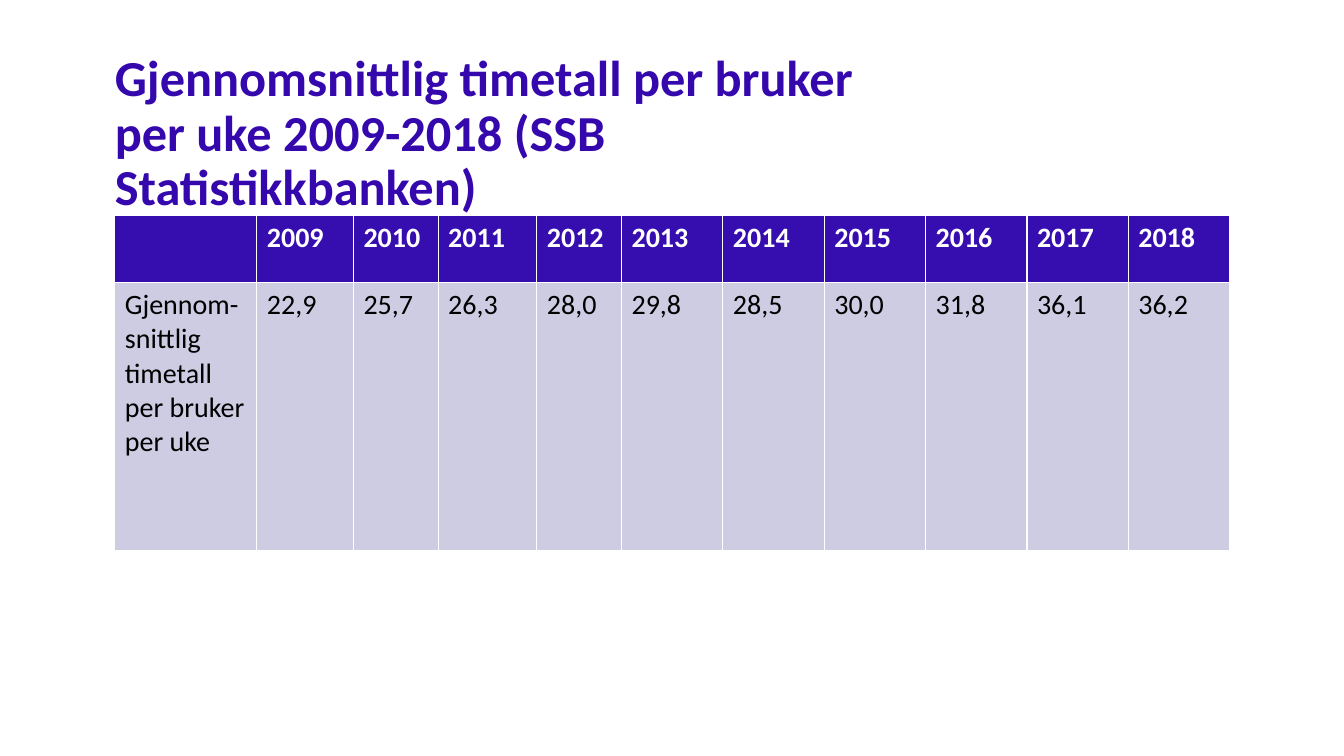
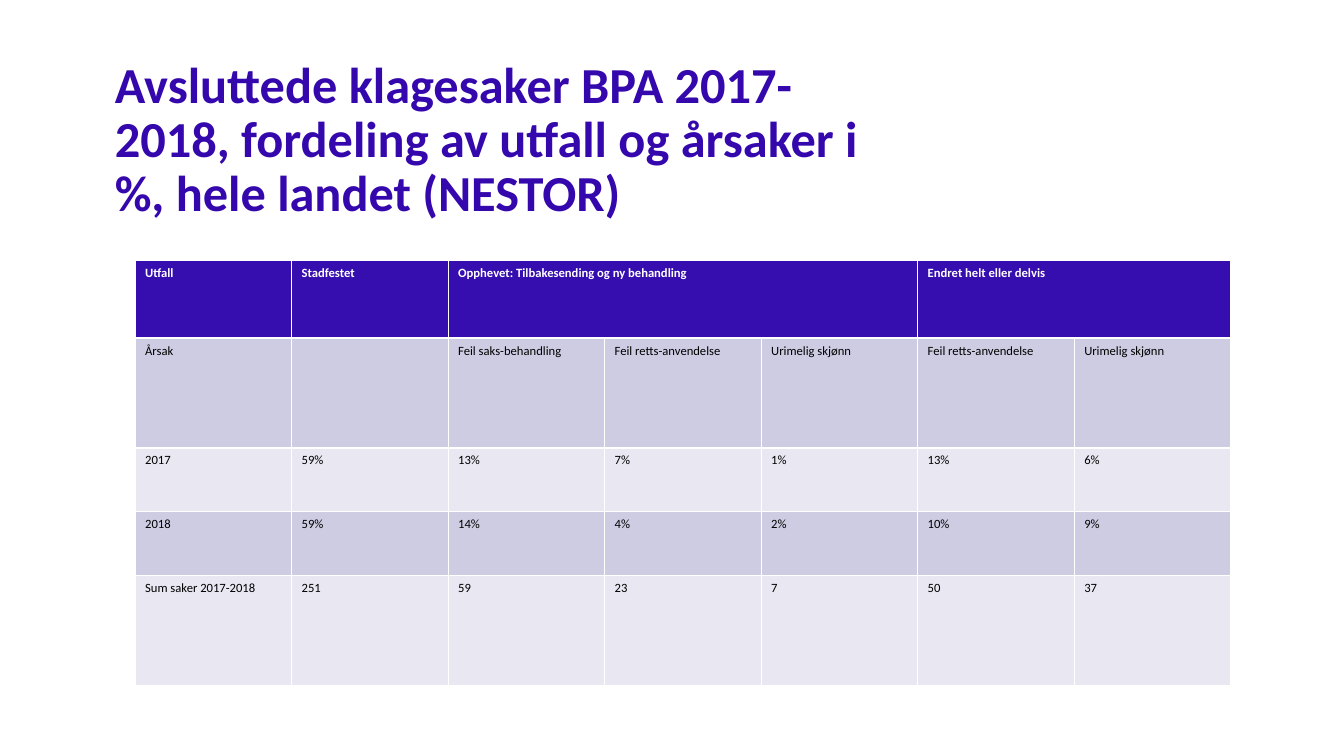
from pptx import Presentation
from pptx.dml.color import RGBColor
from pptx.enum import text
from pptx.util import Pt

FONT = "Calibri"
TITLE, HEADER, WHITE, BLACK = "3408AC", "360DAF", "FFFFFF", "000000"
BANDS = ["CECCE3", "E8E7F2"]


def rgb(value):
    return RGBColor.from_string(value)


def style(p, size, color, bold):
    p.font.name, p.font.size, p.font.bold = FONT, Pt(size), bold
    p.font.color.rgb = rgb(color)


prs = Presentation()
prs.slide_width, prs.slide_height = Pt(960), Pt(540)

# Content of each slide; None continues the merged cell to its left
slides = [
    dict(
        title="Gjennomsnittlig timetall per bruker per uke 2009-2018 (SSB Statistikkbanken)",
        title_box=(82, 38, 567, 69),
        table_at=(82, 154), size=20,
        widths=[101.5, 69, 60.5, 70.5, 60.5] + [72.4] * 6,
        heights=[48, 191.5],
        rows=[
            [""] + [str(year) for year in range(2009, 2019)],
            ["Gjennom-snittlig timetall per bruker per uke", "22,9", "25,7", "26,3",
             "28,0", "29,8", "28,5", "30,0", "31,8", "36,1", "36,2"],
        ],
    ),
    dict(
        title="Avsluttede klagesaker BPA 2017-2018, fordeling av utfall og årsaker i %, "
              "hele landet (NESTOR)",
        title_box=(82, 42.5, 553, 69),
        table_at=(96.5, 186), size=9,
        widths=[111.8] * 7,
        heights=[55.5, 78.5, 45.5, 45.5, 78.5],
        rows=[
            ["Utfall", "Stadfestet", "Opphevet: Tilbakesending og ny behandling", None, None,
             "Endret helt eller delvis", None],
            ["Årsak", "", "Feil saks-behandling", "Feil retts-anvendelse", "Urimelig skjønn",
             "Feil retts-anvendelse", "Urimelig skjønn"],
            ["2017", "59%", "13%", "7%", "1%", "13%", "6%"],
            ["2018", "59%", "14%", "4%", "2%", "10%", "9%"],
            ["Sum saker 2017-2018", "251", "59", "23", "7", "50", "37"],
        ],
    ),
]

for d in slides:
    s = prs.slides.add_slide(prs.slide_layouts[5])

    # Title
    sp = s.shapes.title
    sp.left, sp.top, sp.width, sp.height = [Pt(v) for v in d["title_box"]]
    tf = sp.text_frame
    tf.text = d["title"]
    tf.word_wrap = True
    tf.auto_size = text.MSO_AUTO_SIZE.NONE
    tf.vertical_anchor = text.MSO_ANCHOR.TOP
    tf.margin_left = tf.margin_top = tf.margin_right = tf.margin_bottom = 0
    p = tf.paragraphs[0]
    p.alignment = text.PP_ALIGN.LEFT
    p.line_spacing = 0.9
    style(p, 36, TITLE, True)

    # Table grid
    rows, widths, heights = d["rows"], d["widths"], d["heights"]
    left, top = d["table_at"]
    table = s.shapes.add_table(len(rows), len(widths), Pt(left), Pt(top),
                               Pt(sum(widths)), Pt(sum(heights))).table
    for column, width in zip(table.columns, widths):
        column.width = Pt(width)
    for row, height in zip(table.rows, heights):
        row.height = Pt(height)

    # Cells: dark header row, then alternating bands
    for i, values in enumerate(rows):
        for j, value in enumerate(values):
            cell = table.cell(i, j)
            cell.fill.solid()
            cell.fill.fore_color.rgb = rgb(BANDS[(i - 1) % 2] if i else HEADER)
            if value is not None:
                cell.text = value
                style(cell.text_frame.paragraphs[0], d["size"],
                      BLACK if i else WHITE, i == 0)
                end = j + 1
                while end < len(values) and values[end] is None:
                    end += 1
                if end > j + 1:
                    cell.merge(table.cell(i, end - 1))

prs.save("out.pptx")
